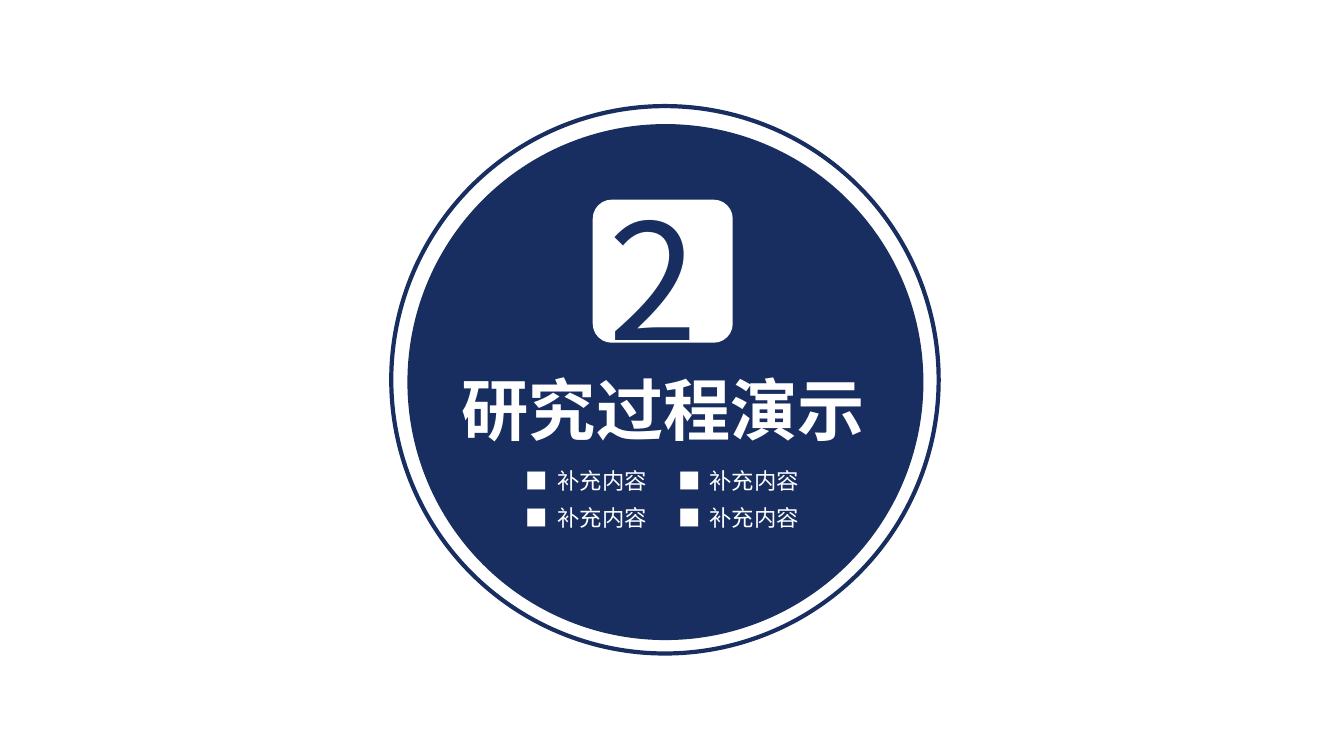
from lxml.etree import SubElement
from pptx import Presentation
from pptx.dml.color import RGBColor
from pptx.enum.shapes import MSO_SHAPE
from pptx.enum.text import MSO_ANCHOR, MSO_AUTO_SIZE, PP_ALIGN
from pptx.oxml.ns import qn
from pptx.util import Pt

COLORS = {"navy": "182E60", "white": "FFFFFF"}
FONT = "Noto Sans CJK SC"


def add_shape(kind, left, top, width, height, fill=None, line=None):
    sp = s.shapes.add_shape(kind, Pt(left), Pt(top), Pt(width), Pt(height))
    sp.shadow.inherit = False
    if fill:
        sp.fill.solid()
        sp.fill.fore_color.rgb = RGBColor.from_string(COLORS[fill])
    else:
        sp.fill.background()
    if line:
        sp.line.color.rgb = RGBColor.from_string(COLORS[line])
        sp.line.width = Pt(3)
    else:
        sp.line.fill.background()
    return sp


def write_text(sp, text, color, wrap=True, **font):
    tf = sp.text_frame
    frame = {"word_wrap": wrap, "auto_size": MSO_AUTO_SIZE.SHAPE_TO_FIT_TEXT,
             "vertical_anchor": MSO_ANCHOR.TOP}
    for name, value in frame.items():
        setattr(tf, name, value)
    p = tf.paragraphs[0]
    p.alignment = PP_ALIGN.LEFT
    r = p.add_run()
    r.text = text
    r.font.color.rgb = RGBColor.from_string(COLORS[color])
    for name, value in {"name": FONT, **font}.items():
        setattr(r.font, name, value)
    SubElement(r.font._element, qn("a:ea"), typeface=FONT)
    return p


prs = Presentation()
prs.slide_width, prs.slide_height = Pt(960), Pt(540)
s = prs.slides.add_slide(prs.slide_layouts[5])

add_shape(MSO_SHAPE.OVAL, 279.5, 75.8, 391, 391, line="navy")
add_shape(MSO_SHAPE.OVAL, 291, 88.6, 368.6, 368.6, fill="navy")

title = s.shapes.title
box = {"left": 322.6, "top": 259.2, "width": 308.9, "height": 65.5}
for name, value in box.items():
    setattr(title, name, Pt(value))
write_text(title, "研究过程演示", "white", wrap=False, size=Pt(48), bold=True)
s.shapes.element.append(title.element)

badge = add_shape(MSO_SHAPE.ROUNDED_RECTANGLE, 423.4, 142.6, 100, 102.2, fill="white")
badge.adjustments[0] = 0.136
number = s.shapes.add_textbox(Pt(427.7), Pt(124.6), Pt(82.8), Pt(146.9))
write_text(number, "2", "navy", size=Pt(115))

for column in range(2):
    for row in range(2):
        item = s.shapes.add_textbox(Pt(368.6 + 108.7 * column), Pt(329.8 + 26.6 * row),
                                    Pt(108), Pt(26.6))
        p = write_text(item, "补充内容", "white", size=Pt(16))
        pPr = p._p.get_or_add_pPr()
        pPr.set("marL", str(Pt(22.5)))
        pPr.set("indent", str(-Pt(22.5)))
        SubElement(pPr, qn("a:buFont"), typeface=FONT)
        SubElement(pPr, qn("a:buChar"), char="■")

prs.save("out.pptx")
